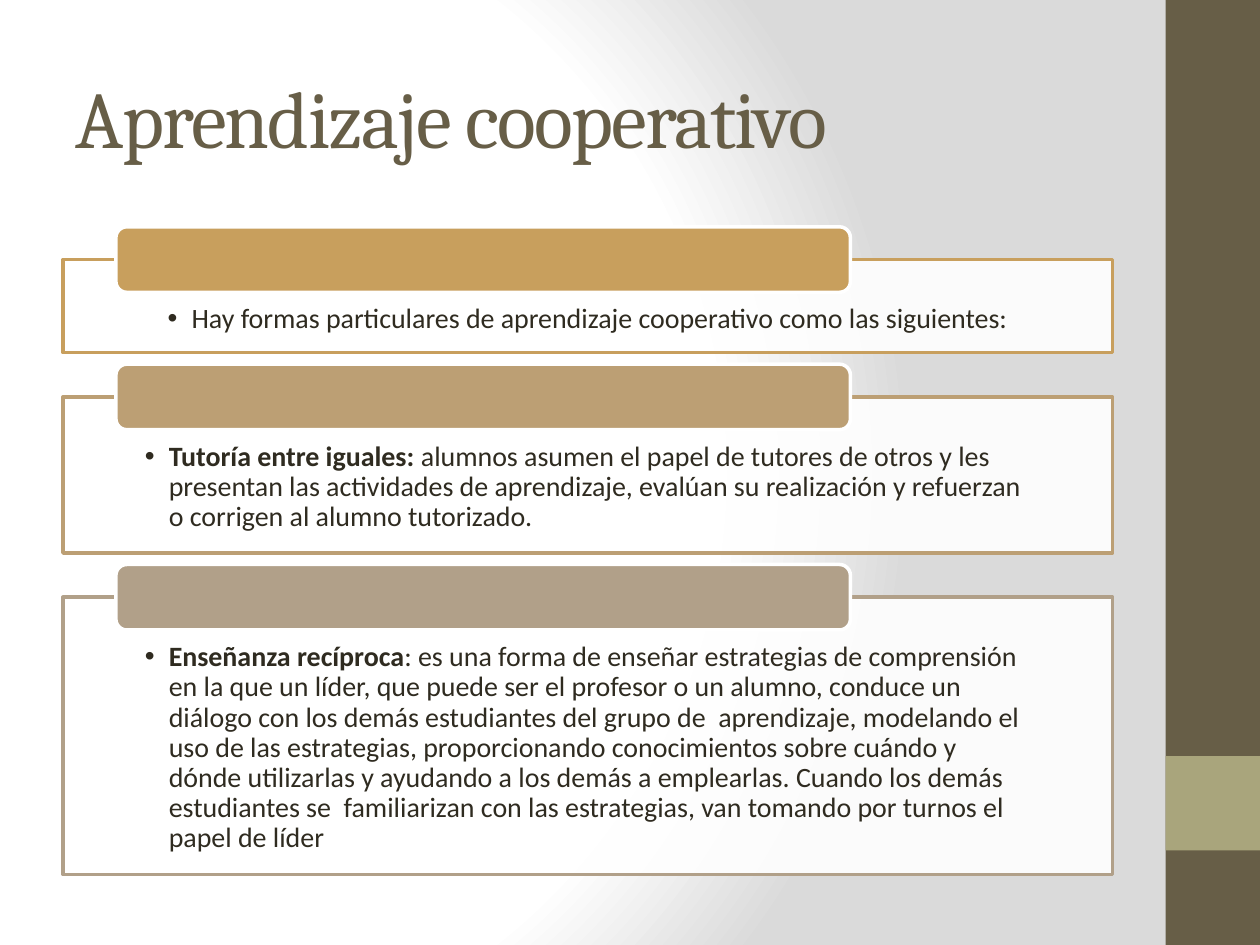
from dataclasses import dataclass

from lxml import etree
from pptx import Presentation
from pptx.dml.color import RGBColor
from pptx.enum.shapes import MSO_SHAPE as Shape
from pptx.enum.text import MSO_ANCHOR as Anchor, MSO_AUTO_SIZE as AutoSize, PP_ALIGN as Align
from pptx.oxml import parse_xml
from pptx.oxml.ns import nsdecls, qn
from pptx.util import Inches, Pt

COLORS = {
    "white": "FFFFFF",
    "gray": "DADADA",
    "olive": "675E47",
    "sage": "A9A57C",
    "text": "2F2B20",
    "gold": "C89F5D",
    "tan": "BC9F74",
    "taupe": "B1A089",
}

LEFT, WIDTH = 0.5, 8.33
FIRST_TOP, GAP = 2.06, 0.35
TAB_LEFT, TAB_WIDTH, TAB_HEIGHT = 0.92, 5.83, 0.52


@dataclass
class Section:
    color: str
    height: float
    heading: str
    body: str
    align: Align = Align.LEFT


SECTIONS = [
    Section(
        "gold", 0.74, "",
        "Hay formas particulares de aprendizaje cooperativo como las siguientes:",
        Align.CENTER,
    ),
    Section(
        "tan", 1.24, "Tutoría entre iguales: ",
        "alumnos asumen el papel de tutores de otros y les presentan las actividades de "
        "aprendizaje, evalúan su realización y refuerzan o corrigen al alumno tutorizado.",
    ),
    Section(
        "taupe", 2.2, "Enseñanza recíproca",
        ": es una forma de enseñar estrategias de comprensión en la que un líder, que puede "
        "ser el profesor o un alumno, conduce un diálogo con los demás estudiantes del grupo "
        "de  aprendizaje, modelando el uso de las estrategias, proporcionando conocimientos "
        "sobre cuándo y dónde utilizarlas y ayudando a los demás a emplearlas. Cuando los "
        "demás estudiantes se  familiarizan con las estrategias, van tomando por turnos el "
        "papel de líder",
    ),
]


def rgb(name: str) -> RGBColor:
    return RGBColor.from_string(COLORS[name])


def apply_format(target, values: dict) -> None:
    for name, value in values.items():
        setattr(target, name, value)


def set_background(slide) -> None:
    stops = "".join(
        f'<a:gs pos="{position * 1000}"><a:srgbClr val="{COLORS[color]}"/></a:gs>'
        for position, color in [(0, "white"), (75, "white"), (100, "gray")]
    )
    background = parse_xml(
        f'<p:bg {nsdecls("p", "a")}><p:bgPr><a:gradFill rotWithShape="1">'
        f'<a:gsLst>{stops}</a:gsLst><a:path path="circle">'
        '<a:fillToRect l="20000" t="50000" r="100000" b="50000"/></a:path>'
        "</a:gradFill><a:effectLst/></p:bgPr></p:bg>"
    )
    slide.element.cSld.insert(0, background)


def add_block(slide, kind: Shape, box: tuple, fill: str, line: str | None = None):
    shape = slide.shapes.add_shape(kind, *map(Inches, box))
    shape.shadow.inherit = False
    shape.fill.solid()
    shape.fill.fore_color.rgb = rgb(fill)
    if line:
        shape.line.color.rgb = rgb(line)
        shape.line.width = Pt(2)
    else:
        shape.line.fill.background()
    return shape


def add_run(paragraph, text: str, size: float, font: str, color: str, bold: bool = False):
    run = paragraph.add_run()
    run.text = text
    apply_format(run.font, {"size": Pt(size), "name": font, "bold": bold})
    run.font.color.rgb = rgb(color)
    return run


def add_bullet(paragraph) -> None:
    properties = paragraph._p.get_or_add_pPr()
    properties.set("marL", str(Inches(0.19)))
    properties.set("indent", str(Inches(-0.19)))
    etree.SubElement(properties, qn("a:buFont")).set("typeface", "Arial")
    etree.SubElement(properties, qn("a:buChar")).set("char", "•")


def add_title(slide, text: str) -> None:
    title = slide.shapes.title
    apply_format(title, {
        "left": Inches(LEFT), "top": Inches(0.3),
        "width": Inches(WIDTH), "height": Inches(1.25),
    })
    apply_format(title.text_frame, {
        "vertical_anchor": Anchor.MIDDLE, "word_wrap": True, "auto_size": AutoSize.NONE,
    })
    paragraph = title.text_frame.paragraphs[0]
    paragraph.alignment = Align.LEFT
    run = add_run(paragraph, text, 46, "Cambria", "olive")
    run.font._element.set("spc", "-100")


def add_section(slide, section: Section, top: float) -> None:
    panel = add_block(
        slide, Shape.RECTANGLE, (LEFT, top, WIDTH, section.height), "white", section.color
    )
    fill_color = panel.fill._xPr.find(qn("a:solidFill"))[0]
    etree.SubElement(fill_color, qn("a:alpha")).set("val", "90000")
    apply_format(panel.text_frame, {
        "margin_left": Inches(0.65), "margin_top": Inches(0.36),
        "margin_right": Inches(0.65), "margin_bottom": Inches(0.12),
        "vertical_anchor": Anchor.TOP, "word_wrap": True,
    })
    paragraph = panel.text_frame.paragraphs[0]
    apply_format(paragraph, {
        "alignment": section.align, "level": 1, "line_spacing": 0.9, "space_after": Pt(2.4),
    })
    add_bullet(paragraph)
    if section.heading:
        add_run(paragraph, section.heading, 16, "Calibri", "text", True)
    add_run(paragraph, section.body, 16, "Calibri", "text")
    tab_box = (TAB_LEFT, top - TAB_HEIGHT / 2, TAB_WIDTH, TAB_HEIGHT)
    add_block(slide, Shape.ROUNDED_RECTANGLE, tab_box, section.color, "white")


def main() -> None:
    presentation = Presentation()
    apply_format(presentation, {"slide_width": Inches(10), "slide_height": Inches(7.5)})
    slide = presentation.slides.add_slide(presentation.slide_layouts[5])
    set_background(slide)
    add_block(slide, Shape.RECTANGLE, (9.25, 0, 0.75, 7.5), "olive")
    add_block(slide, Shape.RECTANGLE, (9.25, 6, 0.75, 0.75), "sage")
    add_title(slide, "Aprendizaje cooperativo")
    top = FIRST_TOP
    for section in SECTIONS:
        add_section(slide, section, top)
        top += section.height + GAP
    presentation.save("out.pptx")


if __name__ == "__main__":
    main()
